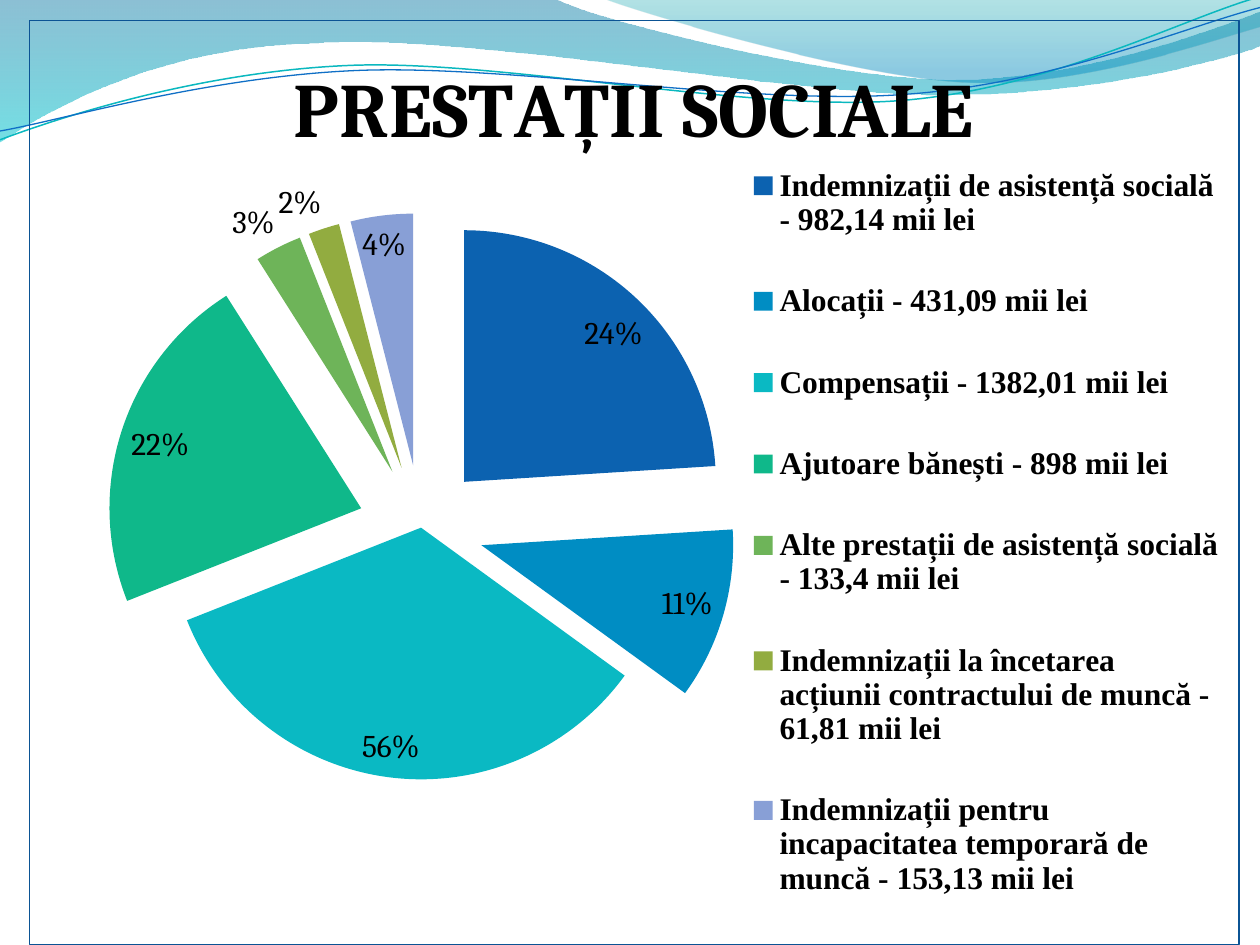
from dataclasses import dataclass
from typing import Optional

from pptx import Presentation
from pptx import util as u
from pptx.chart.data import CategoryChartData
from pptx.dml.color import RGBColor
from pptx.enum import chart as charts
from pptx.oxml import parse_xml
from pptx.oxml.ns import nsdecls, qn

TITLE = "PRESTAȚII SOCIALE"
BODY_FONT, LEGEND_FONT = "Cambria", "Times New Roman"
CHART_LEFT, CHART_TOP, CHART_WIDTH, CHART_HEIGHT = 0.23, 0.16, 9.61, 7.34


@dataclass
class GradientStop:
    position: int
    color: str
    opacity: int


@dataclass
class Wave:
    """Each segment is one point (straight) or three points (Bézier)."""
    start: tuple
    segments: list
    stops: tuple = ()
    line: Optional[str] = None
    width: float = 0


@dataclass
class Slice:
    label: str
    percent: int
    color: str


WAVES = [
    Wave((0, 0), [
        (4.4, -0.01),
        (4.76, 0.17, 6.64, 0.63, 7.58, 0.63),
        (8.53, 0.63, 9.58, 0.26, 10, 0.09),
        (10.01, 0.36),
        (9.83, 0.44, 8.7, 0.76, 7.46, 0.75),
        (6.22, 0.75, 3.82, 0.28, 2.57, 0.34),
        (1.29, 0.36, 0.46, 0.83, -0.01, 1.13),
    ], stops=(GradientStop(0, "0074A1", 45), GradientStop(100, "00C6CF", 55))),
    Wave((4.79, -0.01), [
        (5.09, 0.11, 6.82, 0.62, 7.69, 0.65),
        (8.56, 0.69, 9.61, 0.32, 10, 0.21),
        (10, 0),
    ], stops=(GradientStop(0, "00A1A9", 30), GradientStop(80, "008BBF", 45))),
    Wave((0, 1.11), [
        (0.48, 0.93, 1.58, 0.57, 2.77, 0.52),
        (3.95, 0.47, 5.93, 0.89, 7.13, 0.8),
        (8.33, 0.71, 9.38, 0.15, 9.98, -0.02),
    ], line="0AB8BF", width=0.85),
    Wave((0, 1.04), [
        (0.47, 0.96, 1.64, 0.61, 2.83, 0.56),
        (4.03, 0.51, 5.97, 0.84, 7.17, 0.75),
        (8.36, 0.67, 9.41, 0.21, 10, 0.06),
    ], line="0F6FC6", width=0.75),
]

SLICES = [
    Slice("Indemnizații de asistență socială - 982,14 mii lei", 24, "0C62B0"),
    Slice("Alocații - 431,09 mii lei", 11, "008DC3"),
    Slice("Compensații - 1382,01 mii lei", 34, "0AB9C3"),
    Slice("Ajutoare bănești - 898 mii lei", 22, "0FB88A"),
    Slice("Alte prestații de asistență socială - 133,4 mii lei", 3, "6EB459"),
    Slice("Indemnizații la încetarea acțiunii contractului de muncă - 61,81 mii lei", 2, "92AC40"),
    Slice("Indemnizații pentru incapacitatea temporară de muncă - 153,13 mii lei", 4, "889FD6"),
]
COMPENSATION = 2  # the slice that stays in the centre and has its own label


def rgb(color: str) -> RGBColor:
    return RGBColor.from_string(color)


def style_font(font, **values) -> None:
    font.color.rgb = rgb("000000")
    for name, value in values.items():
        setattr(font, name, value)


def gradient_xml(stops: tuple) -> str:
    marks = "".join(
        f'<a:gs pos="{stop.position * 1000}"><a:srgbClr val="{stop.color}">'
        f'<a:alpha val="{stop.opacity * 1000}"/></a:srgbClr></a:gs>' for stop in stops)
    return (f'<a:gradFill {nsdecls("a")} rotWithShape="1"><a:gsLst>{marks}</a:gsLst>'
            '<a:lin ang="5400000" scaled="0"/></a:gradFill>')


def bend_segments(shape, segments: list) -> None:
    """Join the three straight steps of each Bézier segment into one curve."""
    steps = iter(list(shape._element.iter(qn("a:lnTo"))))
    for segment in segments:
        group = [next(steps) for _ in range(len(segment) // 2)]
        if len(group) == 3:
            curve = parse_xml(f'<a:cubicBezTo {nsdecls("a")}/>')
            group[0].addprevious(curve)
            for step in group:
                curve.append(step[0])
                step.getparent().remove(step)


def draw_wave(page, wave: Wave) -> None:
    points = [tuple(map(u.Inches, segment[i:i + 2]))
              for segment in wave.segments for i in range(0, len(segment), 2)]
    builder = page.shapes.build_freeform(*map(u.Inches, wave.start))
    builder.add_line_segments(points, close=bool(wave.stops))
    shape = builder.convert_to_shape()
    bend_segments(shape, wave.segments)
    shape.shadow.inherit = False
    shape.fill.background()
    if wave.stops:
        shape.line.fill.background()
        empty_fill = shape._element.spPr.find(qn("a:noFill"))
        empty_fill.getparent().replace(empty_fill, parse_xml(gradient_xml(wave.stops)))
    else:
        shape.line.color.rgb = rgb(wave.line)
        shape.line.width = u.Pt(wave.width)


def place(part, follower: str, target: str = "", **inches: float) -> None:
    """Give a chart part a manual layout, measured in inches inside the chart."""
    for old in part.findall(qn("c:layout")):
        part.remove(old)
    whole = {"x": CHART_WIDTH, "w": CHART_WIDTH, "y": CHART_HEIGHT, "h": CHART_HEIGHT}
    inner = f'<c:layoutTarget val="{target}"/>' if target else ""
    modes = "".join(f'<c:{key}Mode val="edge"/>' for key in "xy")
    sizes = "".join(f'<c:{key} val="{value / whole[key]:.4f}"/>'
                    for key, value in inches.items())
    part.find(qn(follower)).addprevious(parse_xml(
        f'<c:layout {nsdecls("c")}><c:manualLayout>{inner}{modes}{sizes}'
        '</c:manualLayout></c:layout>'))


def explosion(percent: int):
    return parse_xml(f'<c:explosion {nsdecls("c")} val="{percent}"/>')


def draw_chart(page, slices: list) -> None:
    data = CategoryChartData()
    data.categories = [item.label for item in slices]
    data.add_series(TITLE, [item.percent for item in slices])
    box = map(u.Inches, (CHART_LEFT, CHART_TOP, CHART_WIDTH, CHART_HEIGHT))
    chart = page.shapes.add_chart(charts.XL_CHART_TYPE.PIE, *box, data).chart
    root = chart._chartSpace
    style_font(chart.font, size=u.Pt(18), name=BODY_FONT)

    # Thin frame without a fill
    root.find(qn("c:chart")).addnext(parse_xml(
        f'<c:spPr {nsdecls("c", "a")}><a:noFill/><a:ln w="{u.Pt(0.75)}">'
        '<a:solidFill><a:srgbClr val="0B5394"/></a:solidFill></a:ln></c:spPr>'))

    # Title
    chart.has_title = True
    span = chart.chart_title.text_frame.paragraphs[0].add_run()
    span.text = TITLE
    style_font(span.font, size=u.Pt(44), bold=True, name=BODY_FONT)
    place(chart.chart_title._element, "c:overlay", x=1.99, y=0.19)

    # Legend
    chart.has_legend = True
    legend = chart.legend
    legend.position = charts.XL_LEGEND_POSITION.RIGHT
    legend.include_in_layout = False
    style_font(legend.font, size=u.Pt(18), bold=True, name=LEGEND_FONT)
    place(legend._element, "c:overlay", x=5.75, y=0.8, w=3.7, h=6.53)

    # Slices
    plot = chart.plots[0]
    plot.vary_by_categories = True
    place(root.find(".//" + qn("c:plotArea")), "c:pieChart", "inner",
          x=0.61, y=1.45, w=5, h=5.16)
    series = plot.series[0]
    for index, item in enumerate(slices):
        fill = series.points[index].format.fill
        fill.solid()
        fill.fore_color.rgb = rgb(item.color)
    series._element.find(qn("c:tx")).addnext(explosion(25))
    center = series._element.findall(qn("c:dPt"))[COMPENSATION]
    center.find(qn("c:spPr")).addprevious(explosion(0))

    # Percentages
    labels = series.data_labels
    for name, value in {"show_percentage": True, "show_value": False,
                        "position": charts.XL_LABEL_POSITION.BEST_FIT}.items():
        setattr(labels, name, value)
    style_font(labels.font, size=u.Pt(18), name=BODY_FONT)
    label = series.points[COMPENSATION].data_label
    span = label.text_frame.paragraphs[0].add_run()
    span.text = "56%"
    style_font(span.font, size=u.Pt(18), name=BODY_FONT)
    label.position = charts.XL_LABEL_POSITION.BEST_FIT


def main() -> None:
    deck = Presentation()
    deck.slide_width, deck.slide_height = u.Inches(10), u.Inches(7.5)
    page = deck.slides.add_slide(deck.slide_layouts[6])
    for wave in WAVES:
        draw_wave(page, wave)
    draw_chart(page, SLICES)
    deck.save("out.pptx")


if __name__ == "__main__":
    main()
